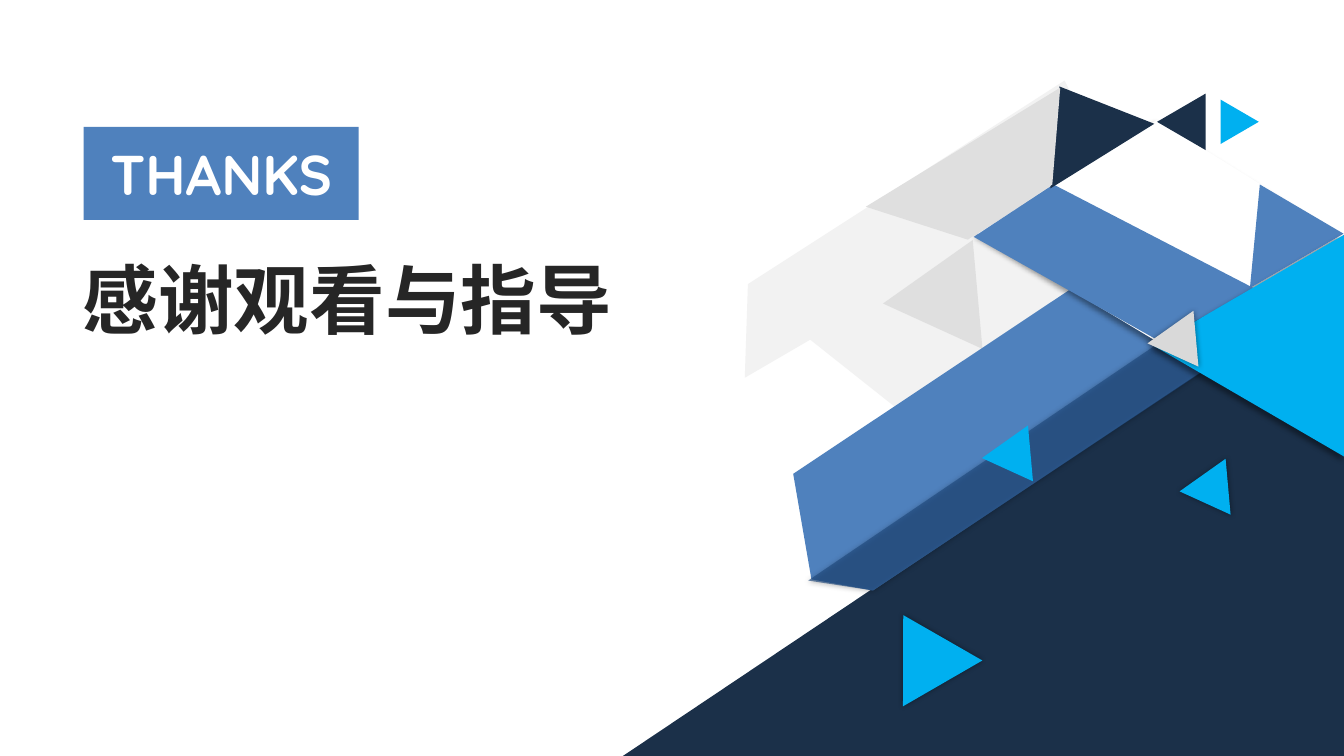
from lxml import etree
from pptx import Presentation
from pptx.dml.color import RGBColor
from pptx.enum.shapes import MSO_SHAPE
from pptx.enum.text import MSO_ANCHOR, MSO_AUTO_SIZE, PP_ALIGN
from pptx.oxml.ns import qn
from pptx.util import Cm, Pt

TRIANGLE = MSO_SHAPE.ISOSCELES_TRIANGLE
RIGHT_TRIANGLE = MSO_SHAPE.RIGHT_TRIANGLE
RECTANGLE = MSO_SHAPE.RECTANGLE
MIDDLE = MSO_ANCHOR.MIDDLE
NO_AUTOFIT = MSO_AUTO_SIZE.NONE
CENTER, JUSTIFY = PP_ALIGN.CENTER, PP_ALIGN.JUSTIFY

FONT = "Quicksand"
NAVY, BLUE, DEEP_BLUE, CYAN = "1B3049", "4F81BD", "1F497D", "00B0F0"
WHITE, PALE, SILVER, GREY, INK = "FFFFFF", "F2F2F2", "DFDFDF", "D9D9D9", "262626"
TRIANGLE_RATIO = 0.86  # height to width

# Shadows: distance in points, direction in degrees
GLOW = (0, 50)
LEFT_SHADOW = (3, 135)


def color(hex_code):
    return RGBColor.from_string(hex_code)


def style(shape, fill, opacity=100, shadow=None):
    shape.fill.solid()
    shape.fill.fore_color.rgb = color(fill)
    shape.line.fill.background()
    shape.shadow.inherit = False
    properties = shape.element.spPr
    if opacity < 100:
        fill_color = properties.find(qn("a:solidFill"))[0]
        etree.SubElement(fill_color, qn("a:alpha"), val=str(opacity * 1000))
    if shadow:
        distance, direction = shadow
        outer = etree.SubElement(
            properties.find(qn("a:effectLst")), qn("a:outerShdw"),
            blurRad=str(Pt(4)), dist=str(Pt(distance)),
            dir=str(direction * 60000), algn="ctr", rotWithShape="0")
        shadow_color = etree.SubElement(outer, qn("a:srgbClr"), val="000000")
        etree.SubElement(shadow_color, qn("a:alpha"), val="40000")


def format_text(shape, text, size, font_color, alignment):
    frame = shape.text_frame
    frame.text = text
    frame.word_wrap = True
    frame.auto_size = NO_AUTOFIT
    frame.vertical_anchor = MIDDLE
    paragraph = frame.paragraphs[0]
    paragraph.alignment = alignment
    paragraph.font.name = FONT
    paragraph.font.size = Pt(size)
    paragraph.font.bold = True
    paragraph.font.color.rgb = color(font_color)


def add_artwork(slide, left, top, width, height):
    """Folded ribbons and triangles; positions are in cm within the box."""

    def polygon(points, fill, opacity=100, shadow=None):
        corners = [(Cm(left + x), Cm(top + y)) for x, y in points]
        builder = slide.shapes.build_freeform(*corners[0])
        builder.add_line_segments(corners[1:], close=True)
        style(builder.convert_to_shape(), fill, opacity, shadow)

    def triangle(center_x, center_y, base, rotation, fill, opacity=100, shadow=None):
        rise = base * TRIANGLE_RATIO
        shape = slide.shapes.add_shape(
            TRIANGLE, Cm(left + center_x - base / 2), Cm(top + center_y - rise / 2),
            Cm(base), Cm(rise))
        shape.rotation = rotation
        style(shape, fill, opacity, shadow)

    # Pale backdrop
    polygon([(7.09, 8.41), (4.72, 6.53), (3.07, 7.49), (3.15, 5.13),
             (11.13, 0), (13.26, 4.29)], PALE)
    triangle(8.37, 5.79, 2.77, 144.7, GREY, opacity=73)

    # Navy corner
    corner_top = 4.85
    corner = slide.shapes.add_shape(
        RIGHT_TRIANGLE, Cm(left), Cm(top + corner_top), Cm(width), Cm(height - corner_top))
    corner.element.spPr.get_or_add_xfrm().set("flipH", "1")
    style(corner, NAVY)
    triangle(7.56, 14.33, 2.31, 330, CYAN, shadow=GLOW)
    triangle(14.96, 10.44, 1.42, 144.7, CYAN, shadow=GLOW)

    # Lower ribbon and its fold
    polygon([(6.3, 12.85), (4.75, 12.57), (4.29, 9.91), (14.22, 3.3), (15.44, 6.76)], BLUE)
    polygon([(6.3, 12.85), (4.67, 12.6), (15.06, 5.56), (15.44, 6.78)],
            DEEP_BLUE, opacity=66, shadow=GLOW)
    triangle(9.98, 9.6, 1.42, 144.7, CYAN)

    # Upper ribbon around the white diamond
    polygon([(8.94, 3.86), (13.46, 0.99), (18.11, 3.89), (13.46, 6.58)],
            WHITE, shadow=LEFT_SHADOW)
    polygon([(13.49, 6.55), (8.84, 3.94), (10.85, 2.62), (15.95, 5.26)], BLUE)
    polygon([(15.8, 5.23), (16.05, 2.62), (18.16, 3.86)], BLUE)

    # Right-hand triangles
    triangle(15.77, 6.68, 5.59, 270, CYAN, shadow=LEFT_SHADOW)
    triangle(14.15, 6.71, 1.42, 144.7, GREY, shadow=GLOW)
    triangle(14.07, 1.04, 1.42, 270, NAVY)
    triangle(15.54, 1.04, 1.12, 90, CYAN)

    # Top fold
    polygon([(10.77, 2.72), (11, 0.15), (13.39, 1.09)], NAVY)
    polygon([(11.02, 0.18), (10.82, 2.62), (8.69, 4.01), (6.12, 3.18)], SILVER)


def add_closing_text(slide, left, top):
    # Label
    label = slide.shapes.add_shape(RECTANGLE, Cm(left), Cm(top), Cm(6.93), Cm(2.34))
    style(label, BLUE)
    format_text(label, "THANKS", 40, WHITE, CENTER)

    # Title, pulled left by its inset
    title = slide.shapes.title
    title.left, title.top = Cm(left - 0.28), Cm(top + 3.02)
    title.width, title.height = Cm(15.9), Cm(2.57)
    format_text(title, "感谢观看与指导", 54, INK, JUSTIFY)
    run_properties = title.text_frame.paragraphs[0].runs[0].font
    run_properties.name = FONT


def main():
    presentation = Presentation()
    presentation.slide_width, presentation.slide_height = Cm(33.87), Cm(19.05)
    slide = presentation.slides.add_slide(presentation.slide_layouts[5])
    add_artwork(slide, 15.7, 2.03, 18.17, 17.02)
    add_closing_text(slide, 2.11, 3.2)
    presentation.save("out.pptx")


if __name__ == "__main__":
    main()
